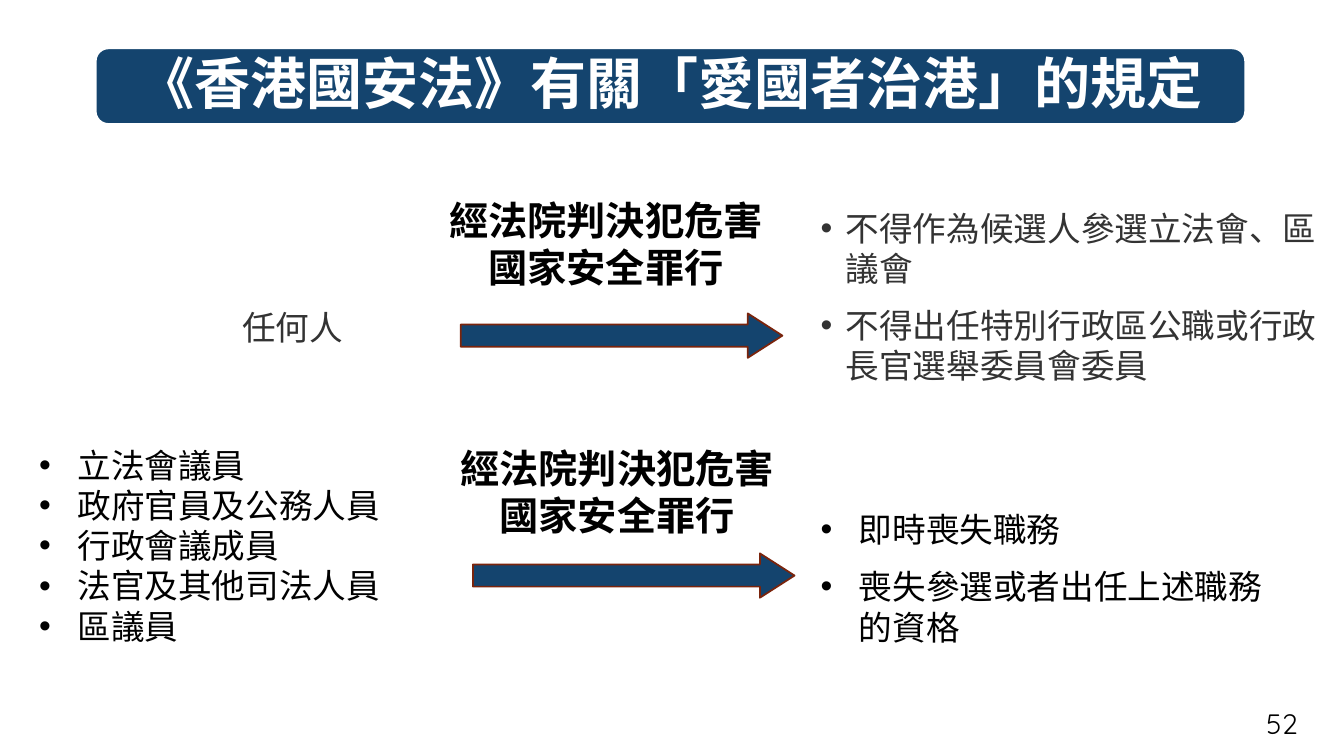
from dataclasses import dataclass

from lxml import etree
from pptx import Presentation
from pptx import util as u
from pptx.dml import color
from pptx.enum import shapes, text
from pptx.oxml import ns


@dataclass(frozen=True)
class Theme:
    navy: str = "14446E"
    rust: str = "7A240C"
    white: str = "FFFFFF"
    black: str = "000000"
    grey: str = "333333"
    font: str = "Roboto"
    number_font: str = "Quicksand"
    title: int = 40
    heading: int = 28
    body: int = 24
    number: int = 20
    outline: float = 1.25


ALIGN = text.PP_ALIGN
ANCHOR = text.MSO_ANCHOR
GROW = text.MSO_AUTO_SIZE.SHAPE_TO_FIT_TEXT


def inches(*values):
    return [u.Inches(v) for v in values]


def rgb(value):
    return color.RGBColor.from_string(value)


def set_values(target, values):
    for name, value in values.items():
        setattr(target, name, value)


class SlideBuilder:
    def __init__(self, slide, theme):
        self.s = slide
        self.theme = theme

    def shape(self, kind, at, line):
        sp = self.s.shapes.add_shape(kind, *inches(*at))
        sp.shadow.inherit = False
        sp.fill.solid()
        sp.fill.fore_color.rgb = rgb(self.theme.navy)
        sp.line.color.rgb = rgb(line)
        sp.line.width = u.Pt(self.theme.outline)
        return sp

    def fill_text(self, sp, lines, size, ink, font=None, bold=False,
                  indent=0, gap=0, frame=None, para=None):
        tf = sp.text_frame
        set_values(tf, {"word_wrap": True, **(frame or {})})
        for i, line in enumerate(lines):
            p = tf.paragraphs[0] if i == 0 else tf.add_paragraph()
            if indent:
                self.bullet(p, indent)
            set_values(p, para or {})
            if i and gap:
                p.space_before = u.Pt(gap)
            r = p.add_run()
            r.text = line
            face = font or self.theme.font
            set_values(r.font, {"name": face, "size": u.Pt(size), "bold": bold})
            r.font.color.rgb = rgb(ink)
            etree.SubElement(r._r.get_or_add_rPr(), ns.qn("a:ea"), typeface=face)

    def bullet(self, p, indent):
        pPr = p._p.get_or_add_pPr()
        margin = u.Inches(indent)
        pPr.set("marL", str(margin))
        pPr.set("indent", str(-margin))
        etree.SubElement(pPr, ns.qn("a:buFont"), typeface="Arial")
        etree.SubElement(pPr, ns.qn("a:buChar"), char="•")

    def textbox(self, at, lines, size, ink, **style):
        sp = self.s.shapes.add_textbox(*inches(*at))
        self.fill_text(sp, lines, size, ink, **style)

    def banner(self, at, title):
        sp = self.shape(shapes.MSO_SHAPE.ROUNDED_RECTANGLE, at, self.theme.white)
        side, edge = inches(0.27, 0.03)
        self.fill_text(sp, [title], self.theme.title, self.theme.white, bold=True,
                       frame={"margin_left": side, "margin_right": side,
                              "margin_top": edge, "margin_bottom": edge,
                              "vertical_anchor": ANCHOR.MIDDLE, "auto_size": GROW},
                       para={"alignment": ALIGN.CENTER, "line_spacing": 0.9})

    def arrow(self, left, top):
        sp = self.shape(shapes.MSO_SHAPE.RIGHT_ARROW, (left, top, 3.19, 0.44),
                        self.theme.rust)
        sp.adjustments[1] = 0.78

    def condition(self, left, top, lines):
        self.textbox((left, top, 3.38, 1.04), lines, self.theme.heading,
                     self.theme.black, bold=True, frame={"auto_size": GROW},
                     para={"alignment": ALIGN.CENTER})

    def bullets(self, at, lines, ink, indent, gap=0):
        self.textbox(at, lines, self.theme.body, ink, indent=indent, gap=gap)

    def subject(self, at, label):
        self.textbox(at, [label], self.theme.body, self.theme.grey,
                     frame={"auto_size": GROW},
                     para={"alignment": ALIGN.RIGHT, "line_spacing": 1.5})

    def page_number(self, at, number):
        self.textbox(at, [number], self.theme.number, self.theme.black,
                     font=self.theme.number_font,
                     frame={"vertical_anchor": ANCHOR.MIDDLE},
                     para={"alignment": ALIGN.RIGHT})


def main():
    prs = Presentation()
    prs.slide_width, prs.slide_height = inches(13.33, 7.5)
    theme = Theme()
    b = SlideBuilder(prs.slides.add_slide(prs.slide_layouts[6]), theme)

    b.banner((0.95, 0.48, 11.4, 0.75), "《香港國安法》有關「愛國者治港」的規定")

    offence = ["經法院判決犯危害", "國家安全罪行"]
    for left, top, arrow_left, arrow_top in [(4.32, 1.9, 4.57, 3.11),
                                             (4.43, 4.36, 4.69, 5.49)]:
        b.condition(left, top, offence)
        b.arrow(arrow_left, arrow_top)

    b.subject((1.66, 2.8, 1.84, 0.64), "任何人")
    b.bullets((8.04, 2.01, 5.12, 2.01),
              ["不得作為候選人參選立法會、區議會",
               "不得出任特別行政區公職或行政長官選舉委員會委員"],
              theme.grey, indent=0.25, gap=12)

    b.bullets((0.29, 4.36, 4.21, 2.16),
              ["立法會議員", "政府官員及公務人員", "行政會議成員",
               "法官及其他司法人員", "區議員"],
              theme.black, indent=0.38)
    b.bullets((8.04, 5, 4.82, 1.29),
              ["即時喪失職務", "喪失參選或者出任上述職務的資格"],
              theme.black, indent=0.38, gap=12)

    b.page_number((9.97, 6.98, 3, 0.4), "52")
    prs.save("out.pptx")


if __name__ == "__main__":
    main()
